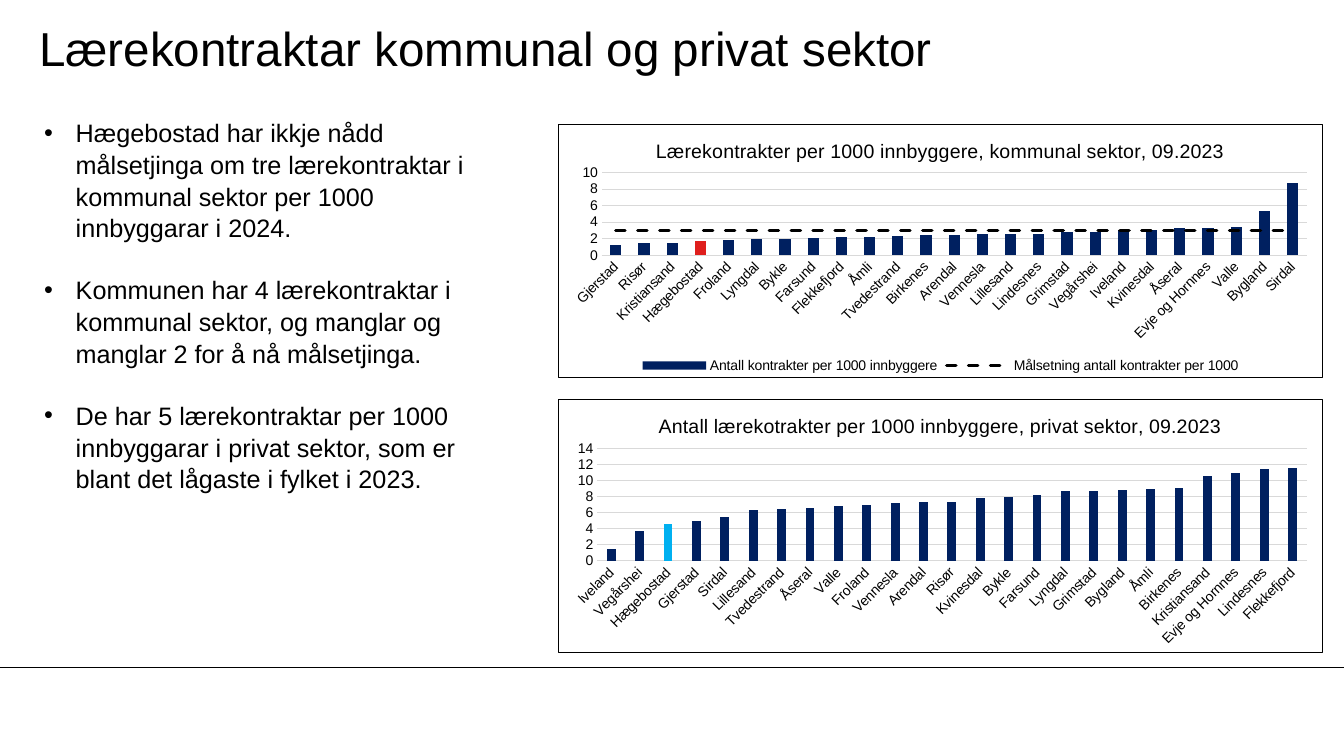
"""Build the slide on apprenticeship contracts in the municipal and private sectors."""
import pptx
import pptx.chart.data
import pptx.dml.color
import pptx.enum.chart
import pptx.enum.dml
import pptx.enum.shapes
import pptx.enum.text
import pptx.oxml
import pptx.oxml.ns
import pptx.util
from lxml import etree

Pt = pptx.util.Pt
qn = pptx.oxml.ns.qn
enum = pptx.enum.chart
NS = pptx.oxml.ns.nsdecls("c", "a")
HUES = {"ink": "000000", "grid": "D9D9D9", "navy": "002060", "red": "DF1F1D", "sky": "00B0F0"}


def hue(name):
    return pptx.dml.color.RGBColor.from_string(HUES[name])


def style(font, size):
    font.name, font.size, font.bold = "Arial", Pt(size), False
    font.color.rgb = hue("ink")


deck = pptx.Presentation()
deck.slide_width, deck.slide_height = Pt(960), Pt(540)
slide = deck.slides.add_slide(deck.slide_layouts[6])

rule = slide.shapes.add_connector(
    pptx.enum.shapes.MSO_CONNECTOR.STRAIGHT, Pt(0), Pt(476.6), Pt(960), Pt(476.6))
rule.line.color.rgb = hue("ink")
rule.line.width = Pt(0.75)
etree.SubElement(rule._element.spPr, qn("a:effectLst"))

head = slide.shapes.add_textbox(Pt(28), Pt(7.2), Pt(799), Pt(54)).text_frame
head.word_wrap = True
head.margin_left = head.margin_right = head.margin_top = head.margin_bottom = 0
head.vertical_anchor = pptx.enum.text.MSO_ANCHOR.MIDDLE
head.text = "Lærekontraktar kommunal og privat sektor"
style(head.paragraphs[0].font, 34)

points = [
    "Hægebostad har ikkje nådd målsetjinga om tre lærekontraktar i kommunal sektor per 1000 innbyggarar i 2024.",
    "Kommunen har 4 lærekontraktar i kommunal sektor, og manglar og manglar 2 for å nå målsetjinga.",
    "De har 5 lærekontraktar per 1000 innbyggarar i privat sektor, som er blant det lågaste i fylket i 2023.",
]
body = slide.shapes.add_textbox(Pt(24.5), Pt(79.2), Pt(322.5), Pt(334)).text_frame
body.word_wrap = True
for i, text in enumerate(points):
    para = body.paragraphs[0] if i == 0 else body.add_paragraph()
    para.text = text
    props = para._p.get_or_add_pPr()
    props.set("marL", str(Pt(22.5)))
    props.set("indent", str(-Pt(22.5)))
    etree.SubElement(props, qn("a:buFont")).set("typeface", "Arial")
    etree.SubElement(props, qn("a:buChar")).set("char", "•")
    para.line_spacing = 1.05
    if i:
        para.space_before = Pt(21.6)
    style(para.font, 18)

charts = [
    {
        "title": "Lærekontrakter per 1000 innbyggere, kommunal sektor, 09.2023",
        "name": "Antall kontrakter per 1000 innbyggere",
        "goal": "Målsetning antall kontrakter per 1000",
        "top": 88.6, "max": 10, "gap": 150, "lap": 0, "mark": "red",
        "plot": (0.056, 0.19, 0.924, 0.327),
        "towns": ["Gjerstad", "Risør", "Kristiansand", "Hægebostad", "Froland", "Lyngdal", "Bykle",
                  "Farsund", "Flekkefjord", "Åmli", "Tvedestrand", "Birkenes", "Arendal", "Vennesla",
                  "Lillesand", "Lindesnes", "Grimstad", "Vegårshei", "Iveland", "Kvinesdal", "Åseral",
                  "Evje og Hornnes", "Valle", "Bygland", "Sirdal"],
        "vals": [1.2, 1.5, 1.5, 1.7, 1.9, 2, 2, 2.1, 2.2, 2.2, 2.3, 2.4, 2.5, 2.6, 2.6, 2.6, 2.8,
                 2.8, 3, 3, 3.3, 3.3, 3.4, 5.3, 8.7],
    },
    {
        "title": "Antall lærekotrakter per 1000 innbyggere, privat sektor, 09.2023",
        "name": "Series 1",
        "goal": None,
        "top": 285.1, "max": 14, "gap": 219, "lap": -27, "mark": "sky",
        "plot": (0.05, 0.193, 0.93, 0.445),
        "towns": ["Iveland", "Vegårshei", "Hægebostad", "Gjerstad", "Sirdal", "Lillesand",
                  "Tvedestrand", "Åseral", "Valle", "Froland", "Vennesla", "Arendal", "Risør",
                  "Kvinesdal", "Bykle", "Farsund", "Lyngdal", "Grimstad", "Bygland", "Åmli",
                  "Birkenes", "Kristiansand", "Evje og Hornnes", "Lindesnes", "Flekkefjord"],
        "vals": [1.5, 3.7, 4.6, 5, 5.4, 6.3, 6.5, 6.6, 6.8, 7, 7.2, 7.3, 7.3, 7.8, 8, 8.2, 8.7,
                 8.7, 8.8, 9, 9.1, 10.6, 11, 11.4, 11.6],
    },
]

for item in charts:
    data = pptx.chart.data.CategoryChartData()
    data.categories = item["towns"]
    data.add_series(item["name"], item["vals"])
    if item["goal"]:
        data.add_series(item["goal"], [3] * len(item["towns"]))
    chart = slide.shapes.add_chart(
        enum.XL_CHART_TYPE.COLUMN_CLUSTERED, Pt(398.9), Pt(item["top"]), Pt(545.8), Pt(181.4), data).chart
    style(chart.font, 10)
    chart.has_title = True
    title = chart.chart_title.text_frame
    title.text = item["title"]
    style(title.paragraphs[0].font, 14)

    bars = chart.plots[0]
    bars.gap_width, bars.overlap = item["gap"], item["lap"]
    bars.vary_by_categories = False
    cols = bars.series[0]
    own = cols.points[item["towns"].index("Hægebostad")]
    for part, name in ((cols, "navy"), (own, item["mark"])):
        part.format.fill.solid()
        part.format.fill.fore_color.rgb = hue(name)

    cat, val = chart.category_axis, chart.value_axis
    for axis in (cat, val):
        axis.major_tick_mark = axis.minor_tick_mark = enum.XL_TICK_MARK.NONE
        style(axis.tick_labels.font, 10)
    cat._element.find(qn("c:txPr")).find(qn("a:bodyPr")).set("rot", "-2700000")
    val.minimum_scale, val.maximum_scale, val.major_unit = 0, item["max"], 2
    val.tick_labels.number_format = "0"
    val.tick_labels.number_format_is_linked = False
    val.format.line.fill.background()
    for line in (cat.format.line, val.major_gridlines.format.line):
        line.color.rgb = hue("grid")
        line.width = Pt(0.75)

    area = chart._chartSpace.chart.plotArea
    for old in area.findall(qn("c:layout")):
        area.remove(old)
    spots = "".join(f'<c:{key} val="{num}"/>' for key, num in zip("xywh", item["plot"]))
    area.insert(0, pptx.oxml.parse_xml(
        f'<c:layout {NS}><c:manualLayout><c:layoutTarget val="inner"/>'
        f'<c:xMode val="edge"/><c:yMode val="edge"/>{spots}</c:manualLayout></c:layout>'))
    chart._chartSpace.chart.addnext(pptx.oxml.parse_xml(
        f'<c:spPr {NS}><a:noFill/><a:ln w="9525"><a:solidFill>'
        f'<a:srgbClr val="{HUES["ink"]}"/></a:solidFill></a:ln></c:spPr>'))

    chart.has_legend = bool(item["goal"])
    if item["goal"]:
        chart.legend.position = enum.XL_LEGEND_POSITION.BOTTOM
        chart.legend.include_in_layout = False
        style(chart.legend.font, 10)
        group = area.find(qn("c:barChart"))
        ser = group.findall(qn("c:ser"))[1]
        for flag in ser.findall(qn("c:invertIfNegative")):
            ser.remove(flag)
        ids = "".join(f'<c:axId val="{ax.get("val")}"/>' for ax in group.findall(qn("c:axId")))
        lines = pptx.oxml.parse_xml(
            f'<c:lineChart {NS}><c:grouping val="standard"/><c:varyColors val="0"/>'
            f'<c:marker val="1"/>{ids}</c:lineChart>')
        lines.insert(2, ser)
        group.addnext(lines)
        goal = chart.plots[1].series[0]
        goal.smooth = False
        goal.marker.style = enum.XL_MARKER_STYLE.NONE
        goal.format.line.color.rgb = hue("ink")
        goal.format.line.width = Pt(2.25)
        goal.format.line.dash_style = pptx.enum.dml.MSO_LINE.DASH
        ser.find(qn("c:spPr")).find(qn("a:ln")).set("cap", "rnd")

deck.save("out.pptx")
